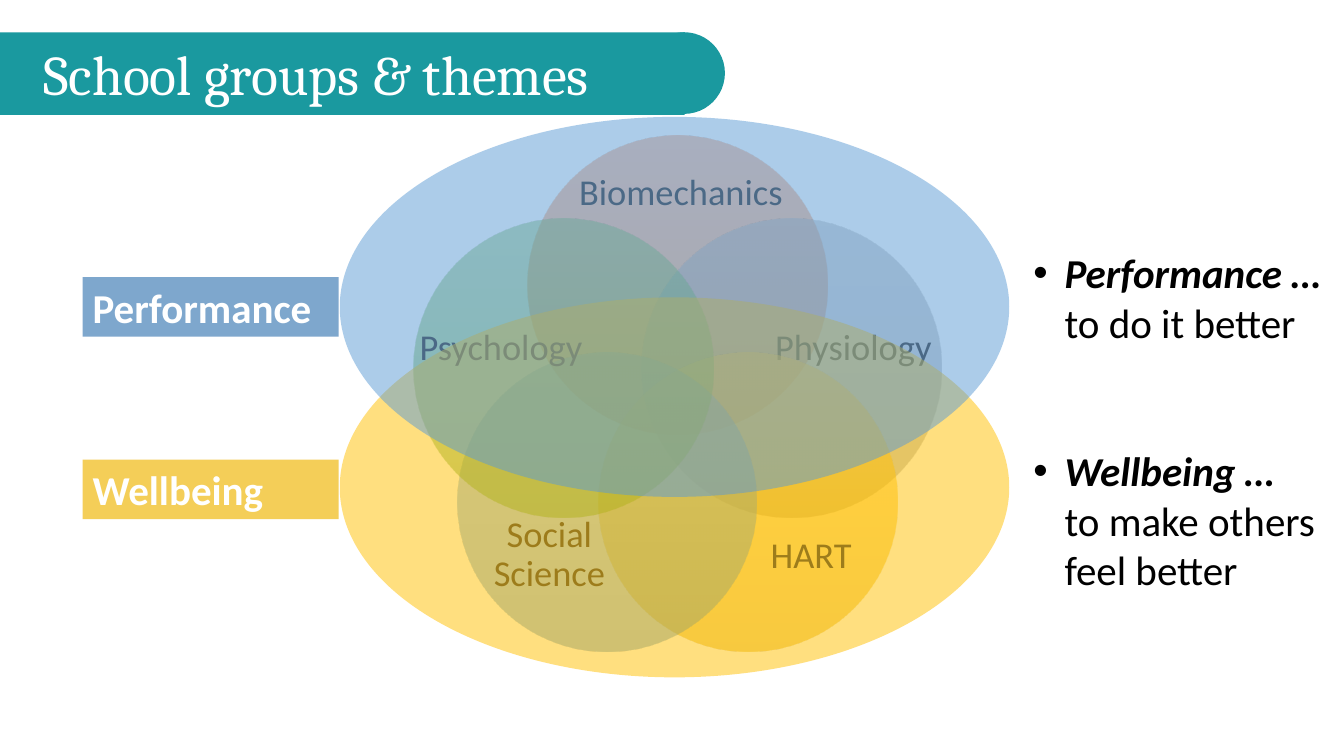
import math

from lxml import etree
from pptx import Presentation
from pptx import util as u
from pptx.dml import color
from pptx.enum import shapes, text
from pptx.oxml import ns

TEAL, WHITE, BLACK, DARK_GREY = "1A999F", "FFFFFF", "000000", "3B3838"
BLUE, GOLD = "5B9BD5", "FFC000"
OVAL, RECT = shapes.MSO_SHAPE.OVAL, shapes.MSO_SHAPE.RECTANGLE


def rgb(value):
    return color.RGBColor.from_string(value)


def add_child(parent, tag, **attributes):
    return etree.SubElement(parent, ns.qn(tag), attributes)


class SlideBuilder:
    font = "Calibri"
    body_size = 29.3
    label_size = 26

    def __init__(self, slide):
        self.slide = slide

    def shape(self, kind, box, fill, opacity=None):
        item = self.slide.shapes.add_shape(kind, *map(u.Inches, box))
        item.shadow.inherit = False
        item.line.fill.background()
        item.fill.solid()
        item.fill.fore_color.rgb = rgb(fill)
        if opacity:
            solid = item.fill._xPr.find(ns.qn("a:solidFill"))
            add_child(solid[0], "a:alpha", val=str(opacity * 1000))
        return item

    def gradient_circle(self, box, stops, opacity=50):
        circle = self.shape(OVAL, box, stops[0])
        properties = circle.fill._xPr
        gradient = etree.Element(ns.qn("a:gradFill"), rotWithShape="1")
        stop_list = add_child(gradient, "a:gsLst")
        for position, stop in zip((0, 50, 100), stops):
            entry = add_child(stop_list, "a:gs", pos=str(position * 1000))
            stop_color = add_child(entry, "a:srgbClr", val=stop)
            add_child(stop_color, "a:alpha", val=str(opacity * 1000))
        add_child(gradient, "a:lin", ang="5400000", scaled="0")
        properties.replace(properties.find(ns.qn("a:solidFill")), gradient)

    def text_box(self, box, anchor=text.MSO_ANCHOR.TOP):
        frame = self.slide.shapes.add_textbox(*map(u.Inches, box)).text_frame
        frame.word_wrap = True
        frame.vertical_anchor = anchor
        return frame

    def run(self, paragraph, words, size, fill, font=None, bold=False, italic=False):
        run = paragraph.add_run()
        run.text = words
        run.font.name = font or self.font
        run.font.size = u.Pt(size)
        run.font.color.rgb = rgb(fill)
        run.font.bold = bold
        run.font.italic = italic

    def label(self, box, words):
        frame = self.text_box(box, text.MSO_ANCHOR.MIDDLE)
        frame.margin_left = frame.margin_right = 0
        frame.margin_top = frame.margin_bottom = 0
        paragraph = frame.paragraphs[0]
        paragraph.alignment = text.PP_ALIGN.CENTER
        paragraph.line_spacing = 0.9
        self.run(paragraph, words, self.label_size, DARK_GREY)

    def tag(self, box, words, fill):
        frame = self.shape(RECT, box, fill).text_frame
        frame.word_wrap = True
        paragraph = frame.paragraphs[0]
        paragraph.alignment = text.PP_ALIGN.LEFT
        self.run(paragraph, words, self.body_size, WHITE, bold=True)

    def title(self, box, words):
        self.run(self.text_box(box).paragraphs[0], words, 40, WHITE, font="Cambria")

    def bullets(self, box, entries, gap):
        frame = self.text_box(box)
        for index, (theme, meaning) in enumerate(entries):
            paragraph = frame.add_paragraph() if index else frame.paragraphs[0]
            properties = paragraph._p.get_or_add_pPr()
            properties.set("marL", str(u.Inches(0.31)))
            properties.set("indent", str(u.Inches(-0.31)))
            add_child(properties, "a:buFont", typeface="Arial")
            add_child(properties, "a:buChar", char="•")
            if index:
                paragraph.space_before = u.Pt(gap)
            self.run(paragraph, theme, self.body_size, BLACK, bold=True, italic=True)
            paragraph.add_line_break()
            self.run(paragraph, meaning, self.body_size, BLACK)


def main():
    deck = Presentation()
    deck.slide_width, deck.slide_height = u.Inches(13.33), u.Inches(7.5)
    builder = SlideBuilder(deck.slides.add_slide(deck.slide_layouts[6]))

    groups = [
        ("Biomechanics", (5.74, 1.38, 2.03, 1.09), ("F18C57", "F67B28", "E56C19")),
        ("Physiology", (7.58, 2.97, 1.77, 0.97), ("AFAFAF", "A5A5A5", "939393")),
        ("HART", (7.52, 5.05, 1.05, 0.94), ("FFC64B", "FFC000", "E3AB00")),
        ("Social Science", (4.48, 4.71, 1.94, 1.59), ("71A6DB", "559BDB", "448ACA")),
        ("Psychology", (4.09, 2.94, 1.76, 1.03), ("81B861", "6FB242", "62A336")),
    ]
    center_x, center_y, ring, diameter = 6.72, 4.02, 1.19, 2.97
    for index, (group, label_box, stops) in enumerate(groups):
        angle = math.tau * index / len(groups)
        left = center_x + ring * math.sin(angle) - diameter / 2
        top = center_y - ring * math.cos(angle) - diameter / 2
        builder.gradient_circle((left, top, diameter, diameter), stops)
        builder.label(label_box, group)

    builder.shape(RECT, (0, 0.32, 6.79, 0.82), TEAL)
    builder.shape(OVAL, (6.38, 0.32, 0.81, 0.81), TEAL)
    builder.title((0.33, 0.34, 7.11, 0.77), "School groups & themes")

    for theme_top, theme_fill in ((2.95, GOLD), (1.16, BLUE)):
        builder.shape(OVAL, (3.37, theme_top, 6.64, 3.77), theme_fill, opacity=50)

    builder.tag((0.82, 2.75, 2.54, 0.59), "Performance", "7EA7CD")
    builder.tag((0.82, 4.56, 2.54, 0.59), "Wellbeing", "F4CE58")
    themes = [
        ("Performance …", "to do it better"),
        ("Wellbeing …", "to make others feel better"),
    ]
    builder.bullets((10.15, 2.41, 3.08, 4.05), themes, gap=71)

    deck.save("out.pptx")


if __name__ == "__main__":
    main()
